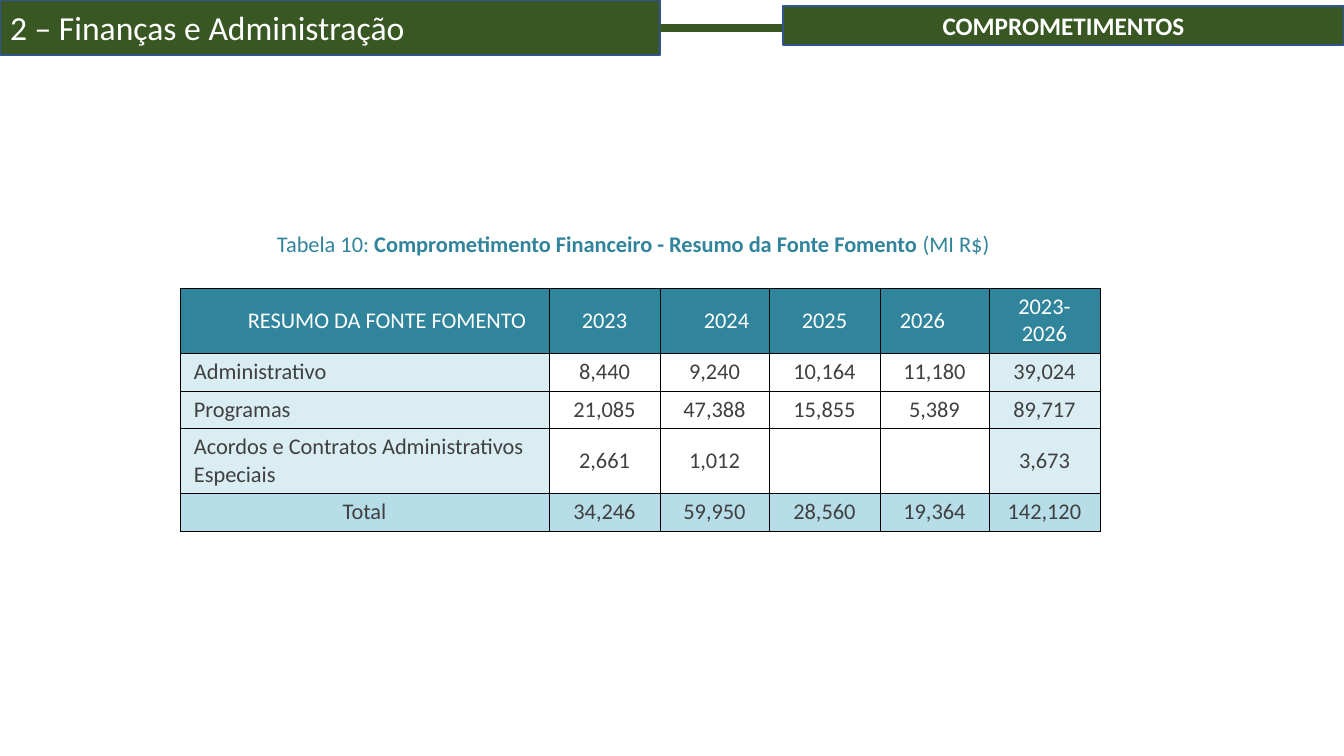
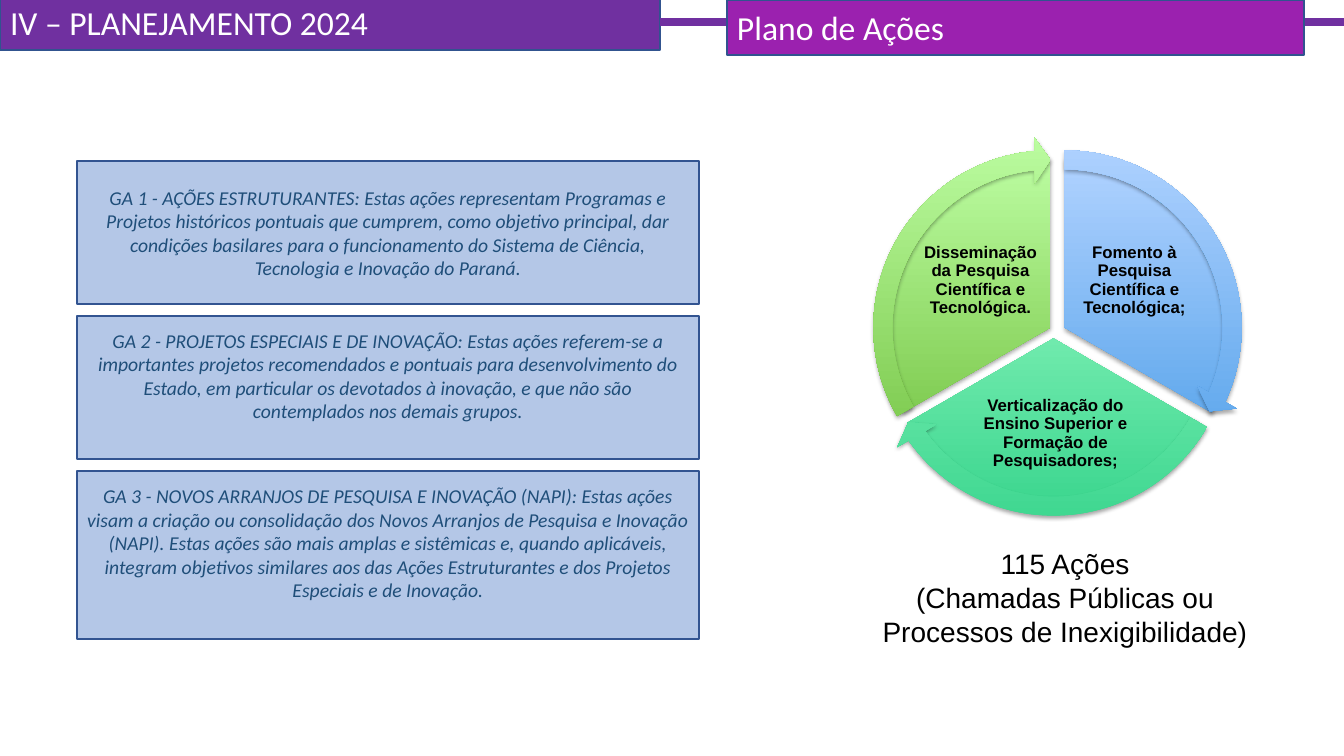
from dataclasses import dataclass

from lxml import etree
from pptx import Presentation
from pptx.dml.color import RGBColor
from pptx.enum.shapes import MSO_CONNECTOR, MSO_SHAPE
from pptx.enum.text import MSO_ANCHOR as Anchor, PP_ALIGN as Align
from pptx.oxml.ns import qn
from pptx.util import Emu, Pt

EMU_PER_PX = 914400 / 100.8


def px(value):
    return Emu(round(value * EMU_PER_PX))


@dataclass(frozen=True)
class Theme:
    body: str = "Calibri"
    label: str = "Arial"
    white: str = "FFFFFF"
    black: str = "000000"
    band_line: str = "31538F"
    green: str = "385723"
    purple: str = "7030A0"
    magenta: str = "9B21AF"
    caption: str = "31849B"
    table_head: str = "30849B"
    table_side: str = "DAEDF3"
    table_total: str = "B6DDE8"
    table_text: str = "404040"
    card_fill: str = "B4C7E7"
    card_line: str = "325491"
    card_text: str = "1F4E79"
    title_size: int = 24
    count_size: int = 20
    tag_size: int = 18
    table_size: int = 16
    card_size: int = 14
    label_size: int = 12


THEME = Theme()
WIDTH, HEIGHT = 1344, 756

FINANCE_BANDS = {
    "title": ("2 – Finanças e Administração", (0, 0, 660, 55), THEME.green),
    "tag": ("COMPROMETIMENTOS", (783, 6, 561, 39), THEME.green),
    "line_y": 28,
    "tag_style": {"size": THEME.tag_size, "bold": True, "align": Align.CENTER},
}
PLAN_BANDS = {
    "title": ("IV – PLANEJAMENTO 2024", (0, -6, 660, 56), THEME.purple),
    "tag": ("Plano de Ações", (727, 0, 577, 55), THEME.magenta),
    "line_y": 22,
    "tag_style": {"size": THEME.title_size},
}

CAPTION = [
    ("Tabela 10: ", False),
    ("Comprometimento Financeiro - Resumo da Fonte Fomento", True),
    (" (MI R$)", False),
]
SUMMARY = [
    ("RESUMO DA FONTE FOMENTO", "2023", "2024", "2025", "2026", "2023-2026"),
    ("Administrativo", "8,440", "9,240", "10,164", "11,180", "39,024"),
    ("Programas", "21,085", "47,388", "15,855", "5,389", "89,717"),
    ("Acordos e Contratos Administrativos Especiais", "2,661", "1,012", "", "", "3,673"),
    ("Total", "34,246", "59,950", "28,560", "19,364", "142,120"),
]
COLUMN_WIDTHS = (369, 111, 109, 111, 109, 111)
ROW_HEIGHTS = (64, 38, 37, 65, 38)
HEAD_INDENTS = {0: (45, 0), 2: (24, 0), 4: (0, 24)}

CARDS = [
    ("GA 1 - AÇÕES ESTRUTURANTES: Estas ações representam Programas e Projetos "
     "históricos pontuais que cumprem, como objetivo principal, dar condições "
     "basilares para o funcionamento do Sistema de Ciência, Tecnologia e Inovação "
     "do Paraná.", 143, 5),
    ("GA 2 - PROJETOS ESPECIAIS E DE INOVAÇÃO: Estas ações referem-se a importantes "
     "projetos recomendados e pontuais para desenvolvimento do Estado, em particular "
     "os devotados à inovação, e que não são contemplados nos demais grupos.", 143, 29),
    ("GA 3 - NOVOS ARRANJOS DE PESQUISA E INOVAÇÃO (NAPI): Estas ações visam a criação "
     "ou consolidação dos Novos Arranjos de Pesquisa e Inovação (NAPI). Estas ações são "
     "mais amplas e sistêmicas e, quando aplicáveis, integram objetivos similares aos "
     "das Ações Estruturantes e dos Projetos Especiais e de Inovação.", 168, 29),
]
CARD_LEFT, CARD_TOP, CARD_WIDTH, CARD_GAP = 77, 161, 622, 12

PIE_SIZE, ARROW_MARGIN = 339, 21
SECTORS = [
    {"text": "Fomento à Pesquisa Científica e Tecnológica;", "label": (1074, 230, 121, 101),
     "corner": (895, 158), "pie": (162, 18), "arrow": (14.72, 161.99),
     "colors": ("499CE7", "B0D2FF")},
    {"text": "Verticalização do Ensino Superior e Formação de Pesquisadores;",
     "label": (965, 389, 181, 89),
     "corner": (884, 169), "pie": (18, 90), "arrow": (86.72, 18),
     "colors": ("3CD68F", "A7FFCC")},
    {"text": "Disseminação da Pesquisa Científica e Tecnológica.",
     "label": (920, 230, 121, 101),
     "corner": (881, 158), "pie": (90, 162), "arrow": (158.73, 90),
     "colors": ("6DBC38", "BBFCA0")},
]
COUNT = ["115 Ações", "(Chamadas Públicas ou", "Processos de Inexigibilidade)"]


def color(value):
    return RGBColor.from_string(value)


def style(para, size, ink, name=THEME.body, bold=False, italic=False, align=Align.LEFT):
    para.alignment = align
    font = para.font
    font.name, font.size, font.bold, font.italic = name, Pt(size), bold, italic
    font.color.rgb = color(ink)


def set_frame(frame, sides=10, top=5, bottom=5, anchor=Anchor.MIDDLE, wrap=True):
    frame.word_wrap = wrap
    frame.vertical_anchor = anchor
    frame.margin_left = frame.margin_right = px(sides)
    frame.margin_top, frame.margin_bottom = px(top), px(bottom)


def add_shape(page, kind, area):
    shape = page.shapes.add_shape(kind, *map(px, area))
    shape.shadow.inherit = False
    return shape


def add_box(page, area, fill, line, line_width):
    box = add_shape(page, MSO_SHAPE.RECTANGLE, area)
    box.fill.solid()
    box.fill.fore_color.rgb = color(fill)
    box.line.color.rgb = color(line)
    box.line.width = Pt(line_width)
    return box


def add_band(page, band, **text_style):
    text, area, fill = band
    box = add_box(page, area, fill, THEME.band_line, 1)
    set_frame(box.text_frame)
    para = box.text_frame.paragraphs[0]
    para.text = text
    style(para, ink=THEME.white, **text_style)


def add_bands(page, bands):
    _, (left, _, width, _), fill = bands["title"]
    add_band(page, bands["title"], size=THEME.title_size)
    y = px(bands["line_y"])
    line = page.shapes.add_connector(MSO_CONNECTOR.STRAIGHT, px(left + width), y, px(WIDTH), y)
    line.line.color.rgb = color(fill)
    line.line.width = Pt(6)
    etree.SubElement(line._element.spPr, qn("a:effectLst"))
    add_band(page, bands["tag"], **bands["tag_style"])


def set_borders(cell):
    properties = cell._tc.get_or_add_tcPr()
    for index, side in enumerate(("lnL", "lnR", "lnT", "lnB")):
        border = etree.Element(qn(f"a:{side}"), w=str(Pt(0.5)))
        fill = etree.SubElement(border, qn("a:solidFill"))
        etree.SubElement(fill, qn("a:srgbClr"), val=THEME.black)
        properties.insert(index, border)


def cell_fill(row, column):
    if row == 0:
        return THEME.table_head
    if row == len(SUMMARY) - 1:
        return THEME.table_total
    return THEME.table_side if column in (0, len(COLUMN_WIDTHS) - 1) else None


def add_summary(page):
    area = (180, 288, sum(COLUMN_WIDTHS), sum(ROW_HEIGHTS))
    table = page.shapes.add_table(len(SUMMARY), len(COLUMN_WIDTHS), *map(px, area)).table
    table.first_row = table.horz_banding = False
    for column, width in zip(table.columns, COLUMN_WIDTHS):
        column.width = px(width)
    for row, height in zip(table.rows, ROW_HEIGHTS):
        row.height = px(height)
    for row, values in enumerate(SUMMARY):
        for column, value in enumerate(values):
            cell = table.cell(row, column)
            named_row = column == 0 and 0 < row < len(SUMMARY) - 1
            left, right = (4, 0) if named_row else (0, 0)
            if row == 0:
                left, right = HEAD_INDENTS.get(column, (0, 0))
            cell.margin_left, cell.margin_right = px(10 + left), px(10 + right)
            cell.vertical_anchor = Anchor.MIDDLE
            fill = cell_fill(row, column)
            if fill:
                cell.fill.solid()
                cell.fill.fore_color.rgb = color(fill)
            else:
                cell.fill.background()
            set_borders(cell)
            para = cell.text_frame.paragraphs[0]
            para.text = value
            style(para, THEME.table_size, THEME.table_text if row else THEME.white,
                  align=Align.LEFT if named_row else Align.CENTER)


def add_text(page, area, **frame_style):
    frame = page.shapes.add_textbox(*map(px, area)).text_frame
    set_frame(frame, **frame_style)
    return frame


def add_caption(page):
    para = add_text(page, (267, 225, 746, 37)).paragraphs[0]
    style(para, THEME.table_size, THEME.caption)
    for text, bold in CAPTION:
        span = para.add_run()
        span.text = text
        span.font.bold = bold


def add_cards(page):
    top = CARD_TOP
    for text, height, bottom in CARDS:
        box = add_box(page, (CARD_LEFT, top, CARD_WIDTH, height),
                      THEME.card_fill, THEME.card_line, 2)
        set_frame(box.text_frame, sides=9, bottom=bottom)
        para = box.text_frame.paragraphs[0]
        para.text = text
        style(para, THEME.card_size, THEME.card_text, italic=True, align=Align.CENTER)
        top += height + CARD_GAP


def add_cycle_part(page, kind, area, adjustments, colors):
    part = add_shape(page, kind, area)
    for index, value in enumerate(adjustments):
        part.adjustments[index] = value
    part.line.fill.background()
    part.fill.gradient()
    part.fill.gradient_angle = 90
    for stop, position, value in zip(part.fill.gradient_stops, (0, 1), colors):
        stop.position = position
        stop.color.rgb = color(value)
    effects = part._element.spPr.find(qn("a:effectLst"))
    shadow = etree.SubElement(effects, qn("a:outerShdw"), blurRad=str(Pt(3.1)),
                              dist=str(Pt(1.8)), dir="5400000", rotWithShape="0")
    ink = etree.SubElement(shadow, qn("a:srgbClr"), val=THEME.black)
    etree.SubElement(ink, qn("a:alpha"), val="35000")


def add_cycle(page):
    for sector in SECTORS:
        add_cycle_part(page, MSO_SHAPE.PIE, (*sector["corner"], PIE_SIZE, PIE_SIZE),
                       sector["pie"], sector["colors"])
        frame = add_text(page, sector["label"], sides=2, top=2, bottom=2)
        para = frame.paragraphs[0]
        para.text = sector["text"]
        para.line_spacing = 0.9
        style(para, THEME.label_size, THEME.black, THEME.label, bold=True, align=Align.CENTER)
    size = PIE_SIZE + 2 * ARROW_MARGIN
    for sector in SECTORS:
        left, top = (value - ARROW_MARGIN for value in sector["corner"])
        add_cycle_part(page, MSO_SHAPE.CIRCULAR_ARROW, (left, top, size, size),
                       (0.05, 3.28, *sector["arrow"], 0.06), sector["colors"])


def add_count(page):
    frame = add_text(page, (871, 542, 388, 112), anchor=Anchor.TOP, wrap=False)
    for index, text in enumerate(COUNT):
        para = frame.add_paragraph() if index else frame.paragraphs[0]
        para.text = text
        style(para, THEME.count_size, THEME.black, THEME.label, align=Align.CENTER)


def main():
    deck = Presentation()
    deck.slide_width, deck.slide_height = px(WIDTH), px(HEIGHT)
    blank = deck.slide_layouts[6]

    finance = deck.slides.add_slide(blank)
    add_summary(finance)
    add_caption(finance)
    add_bands(finance, FINANCE_BANDS)

    plan = deck.slides.add_slide(blank)
    add_cards(plan)
    add_cycle(plan)
    add_bands(plan, PLAN_BANDS)
    add_count(plan)

    deck.save("out.pptx")


if __name__ == "__main__":
    main()
